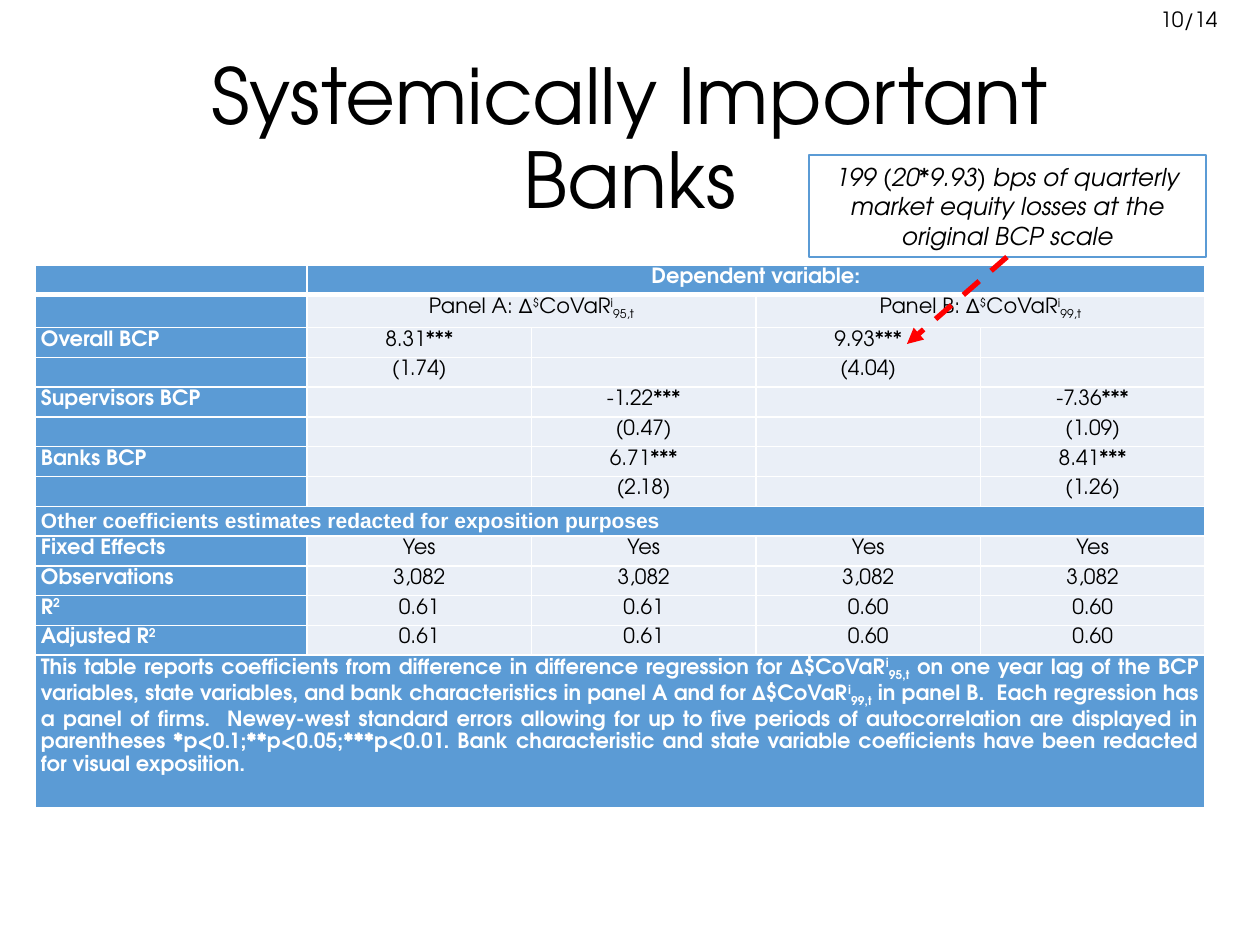
from lxml import etree
from pptx import Presentation
from pptx.dml.color import RGBColor
from pptx.enum.dml import MSO_LINE
from pptx.enum.shapes import MSO_CONNECTOR, MSO_SHAPE
from pptx.enum.text import MSO_ANCHOR, PP_ALIGN
from pptx.oxml.ns import qn
from pptx.util import Pt

PX = 914400 // 126
LEFT, MID, JUST = PP_ALIGN.LEFT, PP_ALIGN.CENTER, PP_ALIGN.JUSTIFY
TOP, CENTER = MSO_ANCHOR.TOP, MSO_ANCHOR.MIDDLE
DASH, RECT, LINE = MSO_LINE.DASH, MSO_SHAPE.RECTANGLE, MSO_CONNECTOR.STRAIGHT
FONT = "TeX Gyre Adventor"
HEX = {"ink": "000000", "white": "FFFFFF", "blue": "5B9BD5",
       "pale": "EAEFF7", "red": "FF0000"}
BASE = {"^": "30000", "_": "-25000"}

# "|" splits runs; a leading "^" raises a run and "_" lowers it
NOTE = ("This table reports coefficients from difference in difference regression for "
        "Δ$CoVaR|^i|_95,t| on one year lag of the BCP variables, state variables, and "
        "bank characteristics in panel A and for Δ$CoVaR|^i|_99,t| in panel B.  Each "
        "regression has a panel of firms.  Newey-west standard errors allowing for up to "
        "five periods of autocorrelation are displayed in parentheses "
        "*p<0.1;**p<0.05;***p<0.01. Bank characteristic and state variable coefficients "
        "have been redacted for visual exposition.")
ROWS = [
    ["", "Dependent variable:"],
    ["", "Panel A: Δ|^$|CoVaR|^i|_95,t", "", "Panel B: Δ|^$|CoVaR|^i|_99,t"],
    ["Overall BCP", "8.31***", "", "9.93***"],
    ["", "(1.74)", "", "(4.04)"],
    ["Supervisors BCP", "", "-1.22***", "", "-7.36***"],
    ["", "", "(0.47)", "", "(1.09)"],
    ["Banks BCP", "", "6.71***", "", "8.41***"],
    ["", "", "(2.18)", "", "(1.26)"],
    ["Other coefficients estimates redacted for exposition purposes"],
    ["Fixed Effects"] + ["Yes"] * 4,
    ["Observations"] + ["3,082"] * 4,
    ["R|^2", "0.61", "0.61", "0.60", "0.60"],
    ["Adjusted R|^2", "0.61", "0.61", "0.60", "0.60"],
    [NOTE],
]
# row, first column, last column
SPANS = [(0, 1, 4), (1, 1, 2), (1, 3, 4), (8, 0, 4), (13, 0, 4)]
WIDE = (8, 13)


def color(name):
    return RGBColor.from_string(HEX[name])


def scale(*nums):
    return [n * PX for n in nums]


def write(frame, text, size=12, ink="ink", font=FONT, bold=False, ital=False,
          align=LEFT, space=None):
    frame.word_wrap = True
    para = frame.paragraphs[0]
    para.alignment = align
    if space:
        para.line_spacing = space
    for part in text.split("|") if text else []:
        run = para.add_run()
        mark = BASE.get(part[0])
        run.text = part[1:] if mark else part
        run.font.name, run.font.size = font, Pt(size)
        run.font.bold, run.font.italic = bold, ital
        run.font.color.rgb = color(ink)
        if mark:
            run.font._element.set("baseline", mark)
    if not text:
        # an empty cell keeps the small size so its row stays low
        etree.SubElement(para._p, qn("a:endParaRPr"), sz=str(size * 100))


def label(slide, box, text, anchor=TOP, **form):
    shape = slide.shapes.add_textbox(*scale(*box))
    shape.text_frame.vertical_anchor = anchor
    write(shape.text_frame, text, **form)


def edge(cell, bold):
    props = cell._tc.get_or_add_tcPr()
    for side in "LRTB":
        width = 3 if bold and side == "B" else 1
        line = etree.SubElement(props, qn("a:ln" + side), w=str(Pt(width)))
        fill = etree.SubElement(line, qn("a:solidFill"))
        etree.SubElement(fill, qn("a:srgbClr"), val=HEX["white"])


def grid(slide, box, first, body):
    table = slide.shapes.add_table(len(ROWS), 5, *scale(*box)).table
    rest = (box[2] - first) * PX // 4
    for num, col in enumerate(table.columns):
        col.width = rest if num else first * PX
    for row in table.rows:
        row.height = body * PX // (len(ROWS) - 1)
    for r, a, b in SPANS:
        table.cell(r, a).merge(table.cell(r, b))
    for r, row in enumerate(ROWS):
        for c in range(5):
            cell = table.cell(r, c)
            head = c == 0 or r == 0 or r in WIDE
            edge(cell, r == 0)
            cell.fill.solid()
            cell.fill.fore_color.rgb = color("blue" if head else "pale")
            cell.margin_left = cell.margin_right = 6 * PX
            cell.margin_top = cell.margin_bottom = 0
            align = MID if c else JUST if r == WIDE[1] else LEFT
            write(cell.text_frame, row[c] if c < len(row) else "",
                  ink="white" if head else "ink", bold=head, align=align,
                  font="Arial" if r == WIDE[0] else FONT, space=1.15)


def callout(slide, box, start, end):
    x, y = box[:2]
    group = slide.shapes.add_group_shape().shapes
    # boxed remark
    note = group.add_shape(RECT, *scale(*box))
    note.shadow.inherit = False
    note.fill.solid()
    note.fill.fore_color.rgb = color("white")
    note.line.color.rgb = color("blue")
    note.line.width = Pt(1)
    note.text_frame.vertical_anchor = CENTER
    write(note.text_frame, "199 (20*9.93) bps of quarterly market equity losses "
          "at the original BCP scale", size=14, ital=True, align=MID)
    # dashed arrow down to the coefficient
    arrow = group.add_connector(LINE, *scale(x + start[0], y + start[1],
                                             x + end[0], y + end[1]))
    arrow.line.color.rgb = color("red")
    arrow.line.width = Pt(3)
    arrow.line.dash_style = DASH
    etree.SubElement(arrow.line._get_or_add_ln(), qn("a:tailEnd"), type="triangle")
    etree.SubElement(arrow._element.spPr, qn("a:effectLst"))


def main():
    deck = Presentation()
    deck.slide_width, deck.slide_height = scale(1260, 945)
    slide = deck.slides.add_slide(deck.slide_layouts[6])
    label(slide, (1148, 0, 111, 38), "10/14")
    label(slide, (87, 50, 1086, 183), "Systemically Important Banks",
          anchor=CENTER, size=44, align=MID, space=0.9)
    grid(slide, (35, 265, 1170, 506), first=272, body=387)
    callout(slide, (809, 155, 397, 102), start=(198, 102), end=(98, 189))
    deck.save("out.pptx")


if __name__ == "__main__":
    main()
